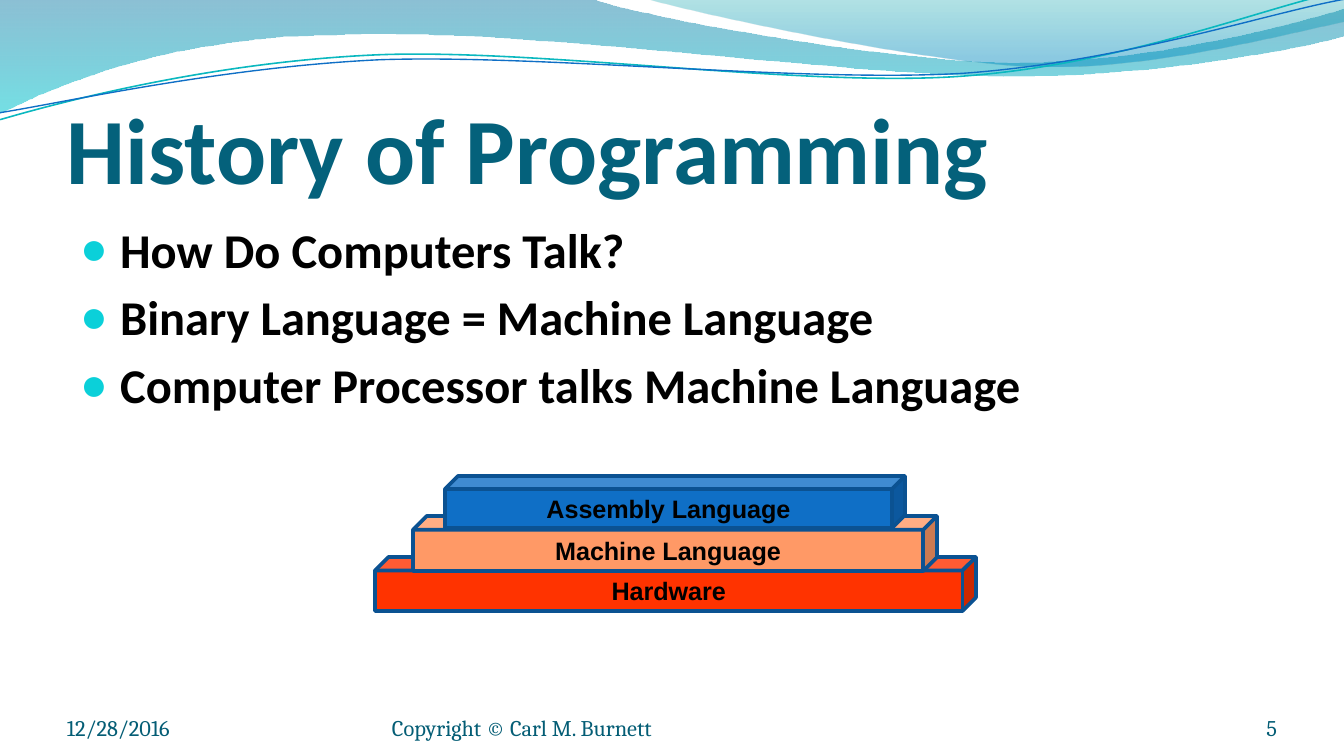
from lxml import etree
from pptx import Presentation
from pptx.dml.color import RGBColor
from pptx.enum.shapes import MSO_SHAPE as Shape
from pptx.enum.text import MSO_ANCHOR as Anchor, PP_ALIGN as Align
from pptx.oxml import parse_xml
from pptx.oxml.ns import nsdecls, qn
from pptx.util import Emu, Pt

PX = 914400 / 134.4
BLACK = RGBColor(0x00, 0x00, 0x00)
TITLE_TEAL = RGBColor(0x04, 0x61, 0x7B)
FOOTER_TEAL = RGBColor(0x04, 0x5D, 0x75)
BULLET_CYAN = RGBColor(0x0B, 0xD0, 0xD9)
LINE_TEAL = RGBColor(0x0A, 0xB8, 0xBF)
BLUE = RGBColor(0x0F, 0x6F, 0xC6)
EDGE_BLUE = RGBColor(0x0B, 0x52, 0x92)
RED = RGBColor(0xFF, 0x33, 0x00)
ORANGE = RGBColor(0xFF, 0x99, 0x66)

deck = Presentation()
deck.slide_width, deck.slide_height = Emu(round(1344 * PX)), Emu(round(756 * PX))
page = deck.slides.add_slide(deck.slide_layouts[6])


def add_wave(start, segments, close):
    """Draw an outline; one point is a straight segment, three are a Bezier."""
    builder = page.shapes.build_freeform(*start, scale=PX)
    builder.add_line_segments([point for segment in segments for point in segment], close=close)
    wave = builder.convert_to_shape()
    wave.shadow.inherit = False
    pieces = iter(list(wave._element.iter(qn("a:lnTo"))))
    for segment in segments:
        first, *others = [next(pieces) for _ in segment]
        if others:
            curve = etree.Element(qn("a:cubicBezTo"))
            first.addprevious(curve)
            for piece in (first, *others):
                curve.append(piece[0])
                piece.getparent().remove(piece)
    return wave


def write(shape, lines, font, size, color, bold=False, align=Align.LEFT, anchor=Anchor.TOP):
    frame = shape.text_frame
    frame.word_wrap = True
    frame.vertical_anchor = anchor
    frame.text = "\n".join(lines)
    for para in frame.paragraphs:
        para.alignment = align
        for span in para.runs:
            span.font.name, span.font.size = font, Pt(size)
            span.font.bold, span.font.color.rgb = bold, color
    return frame


# Header bands: start, segments, gradient stops (position, colour, opacity)
bands = [
    ((0, 0), [[(591, -1)],
              [(640, 17), (892, 63), (1019, 63)],
              [(1146, 63), (1288, 26), (1344, 9)],
              [(1345, 36)],
              [(1321, 44), (1169, 77), (1003, 77)],
              [(836, 75), (513, 28), (345, 35)],
              [(173, 36), (62, 83), (-1, 114)],
              [(0, 0)]],
     [(0, "0074A1", 45), (100, "00C6CF", 55)]),
    ((644, -1), [[(684, 11), (917, 62), (1034, 66)],
                 [(1150, 70), (1292, 32), (1344, 22)],
                 [(1344, 0)],
                 [(644, -1)]],
     [(0, "00A1A9", 30), (80, "008BBF", 45)]),
]
for start, segments, stops in bands:
    band = add_wave(start, segments, True)
    band.line.fill.background()
    band.fill.background()
    stop_xml = "".join(
        f'<a:gs pos="{position * 1000}"><a:srgbClr val="{color}">'
        f'<a:alpha val="{opacity * 1000}"/></a:srgbClr></a:gs>'
        for position, color, opacity in stops)
    gradient = parse_xml(f'<a:gradFill {nsdecls("a")} rotWithShape="1"><a:gsLst>{stop_xml}'
                         '</a:gsLst><a:lin ang="5400000" scaled="0"/></a:gradFill>')
    no_fill = band._element.spPr.find(qn("a:noFill"))
    no_fill.getparent().replace(no_fill, gradient)

# Header lines, slightly tilted
curves = [
    ((-2, 88), [[(64, 72), (212, 41), (373, 41)],
                [(533, 41), (794, 93), (956, 90)],
                [(1119, 87), (1264, 36), (1343, 23)]], LINE_TEAL, 0.85),
    ((-2, 81), [[(62, 74), (220, 46), (380, 46)],
                [(542, 48), (801, 89), (963, 87)],
                [(1123, 83), (1270, 41), (1346, 31)]], BLUE, 0.75),
]
for start, segments, color, width in curves:
    curve = add_wave(start, segments, False)
    curve.rotation = 357.3
    curve.fill.background()
    curve.line.color.rgb, curve.line.width = color, Pt(width)

# Title
box = page.shapes.add_textbox(*(Emu(round(n * PX)) for n in (67, 77, 1210, 126)))
frame = write(box, ["History of Programming"], "Calibri", 50, TITLE_TEAL, True,
              anchor=Anchor.BOTTOM)
frame.margin_left = frame.margin_right = frame.margin_bottom = 0

# Bulleted list
box = page.shapes.add_textbox(*(Emu(round(n * PX)) for n in (67, 213, 1210, 484)))
frame = write(box, ["How Do Computers Talk?", "Binary Language = Machine Language",
                    "Computer Processor talks Machine Language"], "Calibri", 26, BLACK, True)
indent = round(40 * PX)
for para in frame.paragraphs:
    para.space_before = Pt(5.2)
    props = para._p.get_or_add_pPr()
    props.set("marL", str(indent))
    props.set("indent", str(-indent))
    bullet_color = etree.SubElement(props, qn("a:buClr"))
    etree.SubElement(bullet_color, qn("a:srgbClr"), val=str(BULLET_CYAN))
    etree.SubElement(props, qn("a:buSzPct"), val="95000")
    etree.SubElement(props, qn("a:buFont"), typeface="Arial")
    etree.SubElement(props, qn("a:buChar"), char="●")

# Footer
for left, width, text, align in [(67, 313, "12/28/2016", Align.LEFT),
                                 (392, 493, "Copyright © Carl M. Burnett", Align.LEFT),
                                 (1165, 112, "5", Align.RIGHT)]:
    box = page.shapes.add_textbox(*(Emu(round(n * PX)) for n in (left, 701, width, 40)))
    frame = write(box, [text], "Cambria", 12, FOOTER_TEAL, align=align, anchor=Anchor.BOTTOM)
    frame.margin_left = frame.margin_right = frame.margin_top = frame.margin_bottom = 0

# Language layers, bottom to top
for left, top, width, height, text, color in [
        (375, 557, 601, 54, "Hardware", RED),
        (413, 516, 524, 55, "Machine Language", ORANGE),
        (445, 476, 460, 52, "Assembly Language", BLUE)]:
    layer = page.shapes.add_shape(
        Shape.CUBE, *(Emu(round(n * PX)) for n in (left, top, width, height)))
    layer.shadow.inherit = False
    layer.fill.solid()
    layer.fill.fore_color.rgb = color
    layer.line.color.rgb, layer.line.width = EDGE_BLUE, Pt(2)
    write(layer, [text], "Arial", 13.5, BLACK, True, Align.CENTER, Anchor.MIDDLE)

deck.save("out.pptx")
